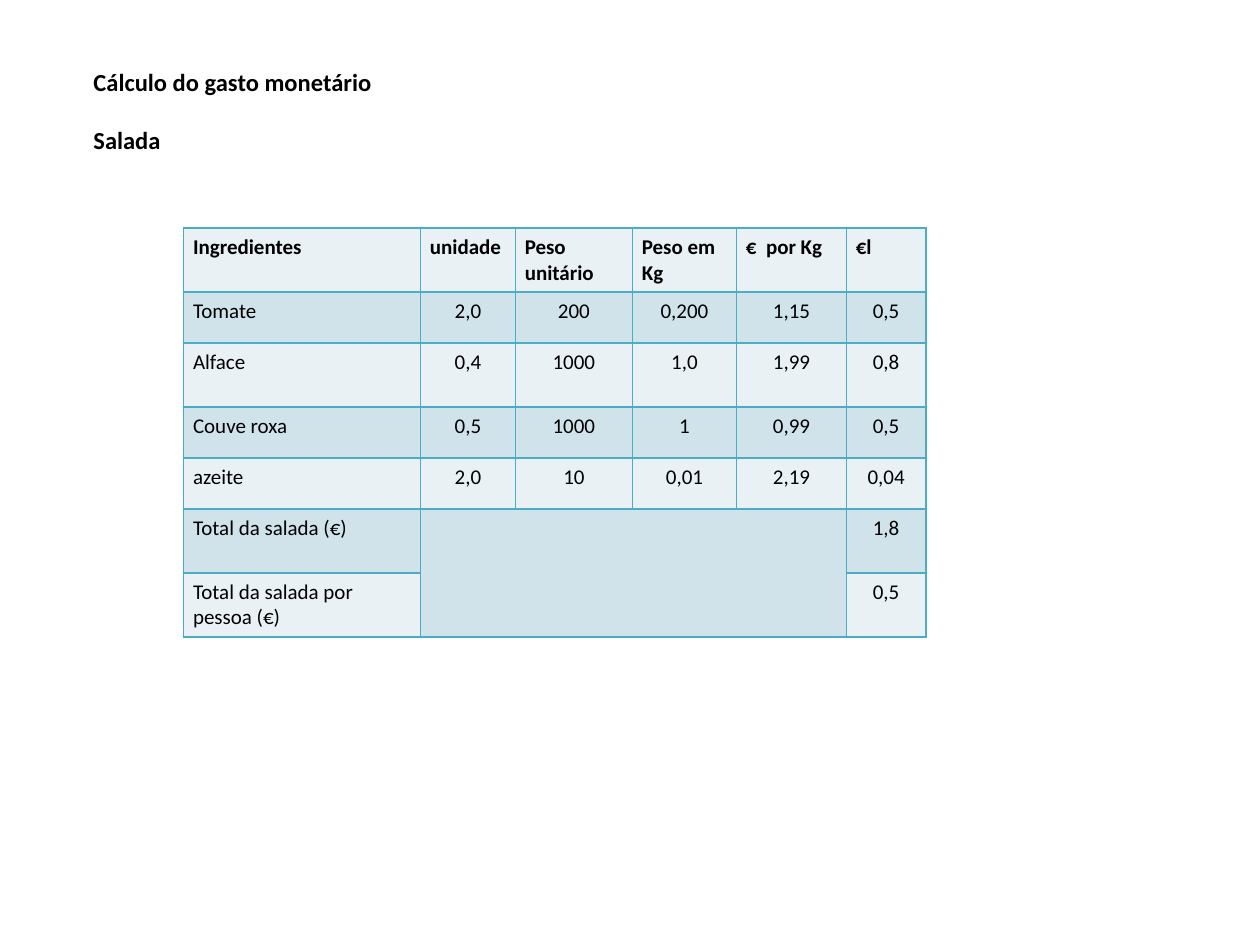
from pptx import Presentation
from pptx.dml.color import RGBColor
from pptx.enum.text import MSO_ANCHOR, MSO_AUTO_SIZE, PP_ALIGN
from pptx.oxml import parse_xml
from pptx.oxml.ns import nsdecls
from pptx.util import Pt

FONT = "Calibri"
BLACK, BORDER = "000000", "4BACC6"
BANDS = ("E9F1F5", "D0E3EA")
COLUMN_WIDTHS = (135.4, 54.2, 66.9, 59.5, 62.8, 45.4)
TALL, SHORT = 36.6, 29.1
ROW_HEIGHTS = (TALL, SHORT, TALL, SHORT, SHORT, TALL, TALL)
HEADINGS = ("Cálculo do gasto monetário", "Salada")
COSTS = (
    ("Ingredientes", "unidade", "Peso unitário", "Peso em Kg", "€  por Kg", "€l"),
    ("Tomate", "2,0", "200", "0,200", "1,15", "0,5"),
    ("Alface", "0,4", "1000", "1,0", "1,99", "0,8"),
    ("Couve roxa", "0,5", "1000", "1", "0,99", "0,5"),
    ("azeite", "2,0", "10", "0,01", "2,19", "0,04"),
    ("Total da salada (€)", "", "", "", "", "1,8"),
    ("Total da salada por pessoa (€)", "", "", "", "", "0,5"),
)


def color(hex_value):
    """Return the colour for a hex string."""
    return RGBColor.from_string(hex_value)


def write(paragraph, text, size=12, bold=False, align=PP_ALIGN.LEFT, before=0):
    """Write formatted text into a paragraph."""
    paragraph.alignment = align
    paragraph.space_before = Pt(before)
    run = paragraph.add_run()
    run.text = text
    run.font.name = FONT
    run.font.size = Pt(size)
    run.font.bold = bold
    run.font.color.rgb = color(BLACK)


def add_borders(cell, width=1):
    """Draw a line on all four sides of a cell."""
    properties = cell._tc.get_or_add_tcPr()
    for position, side in enumerate(("lnL", "lnR", "lnT", "lnB")):
        properties.insert(position, parse_xml(
            f'<a:{side} {nsdecls("a")} w="{Pt(width)}"><a:solidFill>'
            f'<a:srgbClr val="{BORDER}"/></a:solidFill></a:{side}>'))


def place_title(slide, left, top, width, height):
    """Place the two headings in the title placeholder."""
    title = slide.shapes.title
    title.left, title.top = Pt(left), Pt(top)
    title.width, title.height = Pt(width), Pt(height)
    frame = title.text_frame
    frame.word_wrap = True
    frame.auto_size = MSO_AUTO_SIZE.NONE
    frame.vertical_anchor = MSO_ANCHOR.MIDDLE
    main, dish = HEADINGS
    write(frame.paragraphs[0], main, size=14, bold=True)
    write(frame.add_paragraph(), dish, size=14, bold=True, before=16)


def fill_cell(cell, text, row, column):
    """Format one cell by its place in the table."""
    cell.margin_left = cell.margin_right = Pt(5.4)
    cell.margin_top = cell.margin_bottom = Pt(3.6)
    cell.fill.solid()
    cell.fill.fore_color.rgb = color(BANDS[row % 2])
    add_borders(cell)
    if text:
        align = PP_ALIGN.CENTER if row and column else PP_ALIGN.LEFT
        write(cell.text_frame.paragraphs[0], text, bold=row == 0, align=align)


def place_cost_table(slide, left, top, width, height):
    """Place the cost table, sharing the box by column and row sizes."""
    table = slide.shapes.add_table(
        len(COSTS), len(COLUMN_WIDTHS), Pt(left), Pt(top), Pt(width), Pt(height)).table
    for column, share in zip(table.columns, COLUMN_WIDTHS):
        column.width = Pt(width * share / sum(COLUMN_WIDTHS))
    for row, share in zip(table.rows, ROW_HEIGHTS):
        row.height = Pt(height * share / sum(ROW_HEIGHTS))
    for row, costs in enumerate(COSTS):
        for column, text in enumerate(costs):
            fill_cell(table.cell(row, column), text, row, column)
    table.cell(5, 1).merge(table.cell(6, 4))


def main():
    """Build the slide and save it."""
    presentation = Presentation()
    presentation.slide_width, presentation.slide_height = Pt(720), Pt(540)
    slide = presentation.slides.add_slide(presentation.slide_layouts[5])
    place_title(slide, 46.2, 25.2, 620.6, 76.3)
    place_cost_table(slide, 104.9, 130.4, sum(COLUMN_WIDTHS), sum(ROW_HEIGHTS))
    presentation.save("out.pptx")


if __name__ == "__main__":
    main()
